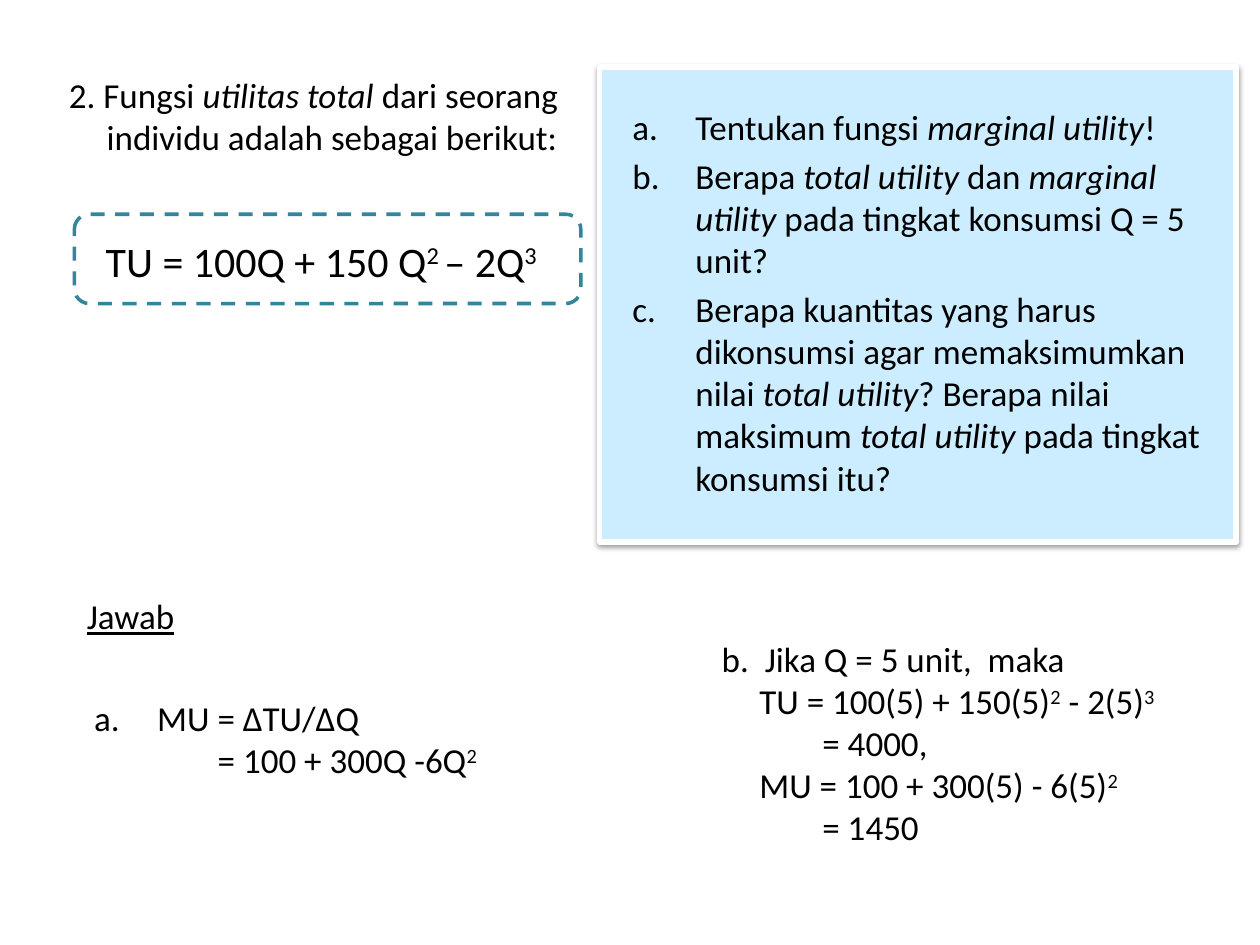
from dataclasses import dataclass
from lxml.etree import SubElement
from pptx import Presentation
from pptx.dml.color import RGBColor
from pptx.enum.dml import MSO_LINE
from pptx.enum.shapes import MSO_SHAPE as SHAPE
from pptx.enum.text import MSO_ANCHOR as ANCHOR
from pptx.oxml.ns import qn
from pptx.util import Cm, Pt


@dataclass(frozen=True)
class Theme:
    font: str = "Calibri"
    ink: RGBColor = RGBColor(0, 0, 0)
    panel: RGBColor = RGBColor(0xCC, 0xEC, 0xFF)
    edge: RGBColor = RGBColor(0xFF, 0xFF, 0xFF)
    dash: RGBColor = RGBColor(0x31, 0x85, 0x9C)
    body: Pt = Pt(20)
    formula: Pt = Pt(24)


T = Theme()


def add_text(box, lines, mark, size=T.body):
    """Write lines; every second piece between bars is italic or superscript."""
    tb = s.shapes.add_textbox(*map(Cm, box))
    tf = tb.text_frame
    tf.word_wrap = True
    for i, line in enumerate(lines):
        p = tf.add_paragraph() if i else tf.paragraphs[0]
        for j, piece in enumerate(line.split("|")):
            if not piece:
                continue
            r = p.add_run()
            r.text = piece
            r.font.name, r.font.size = T.font, size
            r.font.color.rgb = T.ink
            if j % 2 and mark == "italic":
                r.font.italic = True
            elif j % 2:
                r.font._element.set("baseline", "30000")
    return tf


def indent(p, hang, numbered=False):
    """Hang the paragraph, with an a., b., c. number if wanted."""
    pPr = p._p.get_or_add_pPr()
    pPr.set("marL", str(Cm(hang)))
    pPr.set("indent", str(-Cm(hang)))
    if numbered:
        SubElement(pPr, qn("a:buFont"), typeface="+mj-lt")
        SubElement(pPr, qn("a:buAutoNum"), type="alphaLcPeriod")


prs = Presentation()
prs.slide_width, prs.slide_height = Cm(25.4), Cm(19.05)
s = prs.slides.add_slide(prs.slide_layouts[6])

# Question panel with a soft shadow
panel = s.shapes.add_shape(SHAPE.RECTANGLE, Cm(12.09), Cm(1.35), Cm(12.83), Cm(9.58))
panel.fill.solid()
panel.fill.fore_color.rgb = T.panel
panel.line.color.rgb = T.edge
panel.line.width = Pt(3)
panel.shadow.inherit = False
effects = panel._element.spPr.find(qn("a:effectLst"))
shadow = SubElement(effects, qn("a:outerShdw"), blurRad="40000", dist="20000",
                    dir="5400000", rotWithShape="0")
black = SubElement(shadow, qn("a:srgbClr"), val="000000")
SubElement(black, qn("a:alpha"), val="38000")

# Dashed frame of the utility function
frame = s.shapes.add_shape(SHAPE.ROUNDED_RECTANGLE, Cm(1.5), Cm(4.32), Cm(10.21), Cm(1.8))
frame.fill.background()
frame.line.color.rgb = T.dash
frame.line.width = Pt(2)
frame.line.dash_style = MSO_LINE.DASH
frame.shadow.inherit = False

# Questions
tf = add_text((12.5, 2.01, 11.99, 8.33), [
    "Tentukan fungsi |marginal utility|!",
    "Berapa |total utility |dan |marginal utility |pada tingkat konsumsi Q = 5 unit?",
    "Berapa kuantitas yang harus dikonsumsi agar memaksimumkan nilai |total utility|"
    "? Berapa nilai maksimum |total utility |pada tingkat konsumsi itu?",
], "italic")
for p in tf.paragraphs:
    p.space_before = Pt(4)
    indent(p, 1.27, numbered=True)

# Answer heading
tf = add_text((1.5, 11.73, 3.23, 1.37), ["Jawab"], "italic")
tf.vertical_anchor = ANCHOR.MIDDLE
tf.paragraphs[0].runs[0].font.underline = True

# Problem statement and its function
tf = add_text((1.14, 1.35, 10.95, 1.96), [
    "2. Fungsi |utilitas total |dari seorang individu adalah sebagai berikut:"], "italic")
indent(tf.paragraphs[0], 0.76)
add_text((1.88, 4.62, 9.4, 1.96), ["TU = 100Q + 150 Q|2 |– 2Q|3"], "super", T.formula)

# Answer a
tf = add_text((1.65, 13.92, 9.25, 1.96),
              ["MU = ΔTU/ΔQ", "\t= 100 + 300Q -6Q|2"], "super")
indent(tf.paragraphs[0], 1.27, numbered=True)
indent(tf.paragraphs[1], 2.49)

# Answer b
tf = add_text((14.3, 12.73, 9.32, 4.52), [
    "b.  Jika Q = 5 unit,  maka",
    "\tTU = 100(5) + 150(5)|2| - 2(5)|3",
    "\t\t= 4000,",
    "\tMU = 100 + 300(5) - 6(5)|2",
    "\t\t= 1450",
], "super")
for p in tf.paragraphs[1:]:
    indent(p, 0.76)

prs.save("out.pptx")
